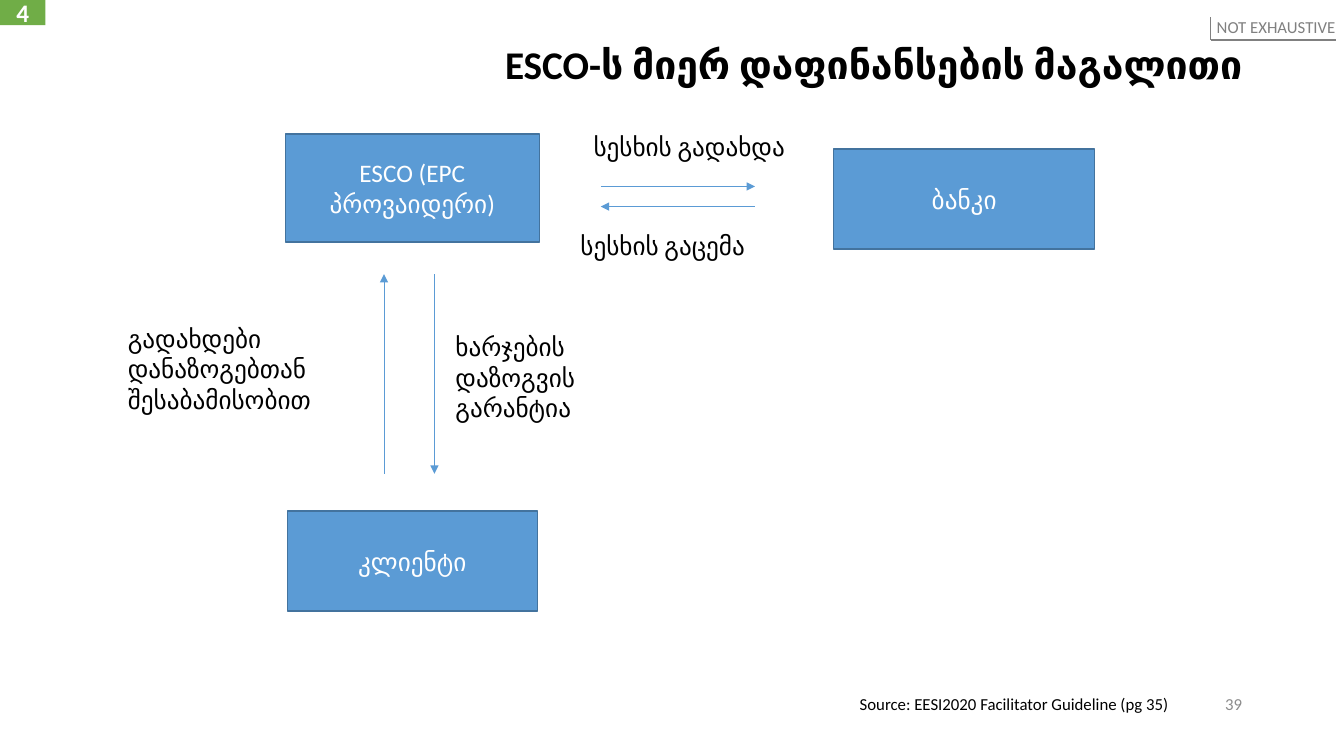
from dataclasses import dataclass

from lxml import etree
from pptx import Presentation
from pptx.dml.color import RGBColor
from pptx.enum.shapes import MSO_CONNECTOR, MSO_SHAPE
from pptx.enum.text import MSO_ANCHOR, PP_ALIGN
from pptx.oxml.ns import qn
from pptx.util import Inches, Pt

RECTANGLE = MSO_SHAPE.RECTANGLE
STRAIGHT = MSO_CONNECTOR.STRAIGHT
TOP, MIDDLE = MSO_ANCHOR.TOP, MSO_ANCHOR.MIDDLE
LEFT, CENTER, RIGHT = PP_ALIGN.LEFT, PP_ALIGN.CENTER, PP_ALIGN.RIGHT


@dataclass(frozen=True)
class Theme:
    font: str = "Calibri"
    title: int = 28
    body: int = 18
    small: int = 12
    black: str = "000000"
    white: str = "FFFFFF"
    blue: str = "5B9BD5"
    outline: str = "43739E"
    green: str = "70AD47"
    gray: str = "808080"
    number: str = "8C8C8C"


THEME = Theme()
COLUMNS, ROWS = 133.33, 75  # grid of tenths of an inch


def grid(*cells):
    return [Inches(cell / 10) for cell in cells]


def color(code):
    return RGBColor.from_string(code)


def write(box, text, size=THEME.body, ink=THEME.black, bold=False,
          align=LEFT, anchor=TOP, wrap=True, spacing=None):
    frame = box.text_frame
    frame.word_wrap = wrap
    frame.vertical_anchor = anchor
    para = frame.paragraphs[0]
    para.alignment = align
    if spacing:
        para.line_spacing = spacing
    span = para.add_run()
    span.text = text
    span.font.name = THEME.font
    span.font.size = Pt(size)
    span.font.bold = bold
    span.font.color.rgb = color(ink)


def add_label(page, text, area, **style):
    box = page.shapes.add_textbox(*grid(*area))
    write(box, text, **style)
    return box


def add_block(page, text, area, fill=THEME.blue, outline=THEME.outline, bold=False):
    box = page.shapes.add_shape(RECTANGLE, *grid(*area))
    box.shadow.inherit = False
    box.fill.solid()
    box.fill.fore_color.rgb = color(fill)
    if outline:
        box.line.color.rgb = color(outline)
        box.line.width = Pt(1)
    else:
        box.line.fill.background()
    write(box, text, ink=THEME.white, bold=bold, align=CENTER, anchor=MIDDLE)


def add_line(page, start, end, ink=THEME.blue, width=0.5, arrow=False):
    line = page.shapes.add_connector(STRAIGHT, *grid(*start, *end))
    line.line.color.rgb = color(ink)
    line.line.width = Pt(width)
    if arrow:
        etree.SubElement(line.line._get_or_add_ln(), qn("a:tailEnd"), type="triangle")
    etree.SubElement(line._element.spPr, qn("a:effectLst"))


def add_sticker(page, text, left, top, width, height):
    right, bottom = left + width, top + height
    box = add_label(page, text, (left, top, width, height), size=THEME.small,
                    ink=THEME.gray, align=RIGHT, wrap=False)
    frame = box.text_frame
    frame.margin_left, frame.margin_top, frame.margin_right, frame.margin_bottom = grid(
        0.4, 0, 0, 0.3)
    add_line(page, (right, bottom), (left, bottom), ink=THEME.gray, width=1.5)
    add_line(page, (left, top), (left, bottom), ink=THEME.gray)


def main():
    deck = Presentation()
    deck.slide_width, deck.slide_height = grid(COLUMNS, ROWS)
    page = deck.slides.add_slide(deck.slide_layouts[6])

    # Heading
    add_label(page, "ESCO-ს მიერ დაფინანსების მაგალითი", (9.2, 4, 115, 5.7),
              size=THEME.title, bold=True, align=RIGHT, spacing=0.9)

    # Parties
    for text, area in (
        ("ESCO (EPC პროვაიდერი)", (28.3, 13.3, 25.2, 10.7)),
        ("კლიენტი", (28.5, 50.7, 24.8, 9.9)),
        ("ბანკი", (82.7, 14.8, 25.9, 9.9)),
    ):
        add_block(page, text, area)

    # Flows between the parties
    upper, lower = 27.2, 47
    near, far = 59.6, 74.9
    for start, end in (
        ((43.1, upper), (43.1, lower)),
        ((38.1, lower), (38.1, upper)),
        ((near, 18.5), (far, 18.5)),
        ((far, 20.5), (near, 20.5)),
    ):
        add_line(page, start, end, arrow=True)
    for text, area in (
        ("ხარჯების დაზოგვის გარანტია", (44.2, 32.4, 22.9, 10.1)),
        ("გადახდები დანაზოგებთან შესაბამისობით", (11.7, 31.6, 21.4, 10.1)),
        ("სესხის გაცემა", (56.6, 22.4, 26.2, 4)),
        ("სესხის გადახდა", (57.9, 12.5, 22.8, 4)),
    ):
        add_label(page, text, area)

    # Corner marks
    add_block(page, "4", (0, 0, 4.5, 2.5), fill=THEME.green, outline=None, bold=True)
    add_sticker(page, "NOT EXHAUSTIVE", 120.1, 1.7, 12.4, 2.3)

    # Footer
    add_label(page, "Source: EESI2020 Facilitator Guideline (pg 35)",
              (84.3, 68.3, 33, 3), size=THEME.small, wrap=False)
    add_label(page, "39", (94.2, 67.8, 30, 4), size=THEME.small,
              ink=THEME.number, align=RIGHT, anchor=MIDDLE)

    deck.save("out.pptx")


if __name__ == "__main__":
    main()
